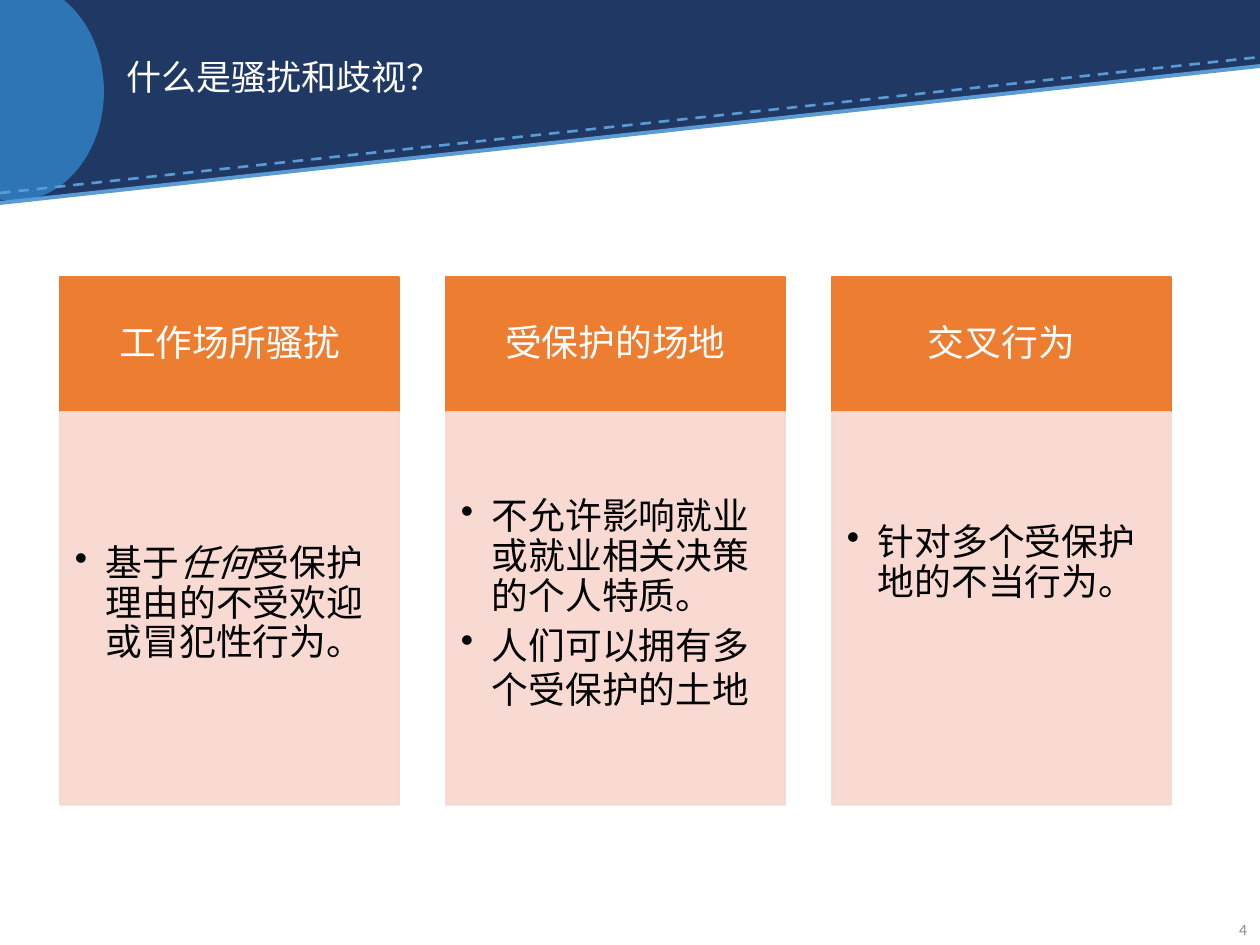
from dataclasses import dataclass

from lxml import etree
from pptx import Presentation
from pptx.dml.color import RGBColor
from pptx.enum.dml import MSO_LINE
from pptx.enum.shapes import MSO_CONNECTOR, MSO_SHAPE
from pptx.enum.text import MSO_ANCHOR, PP_ALIGN
from pptx.oxml.ns import qn
from pptx.util import Pt

EMU_PER_PX = 914400 / 126
RECT, TRIANGLE, OVAL = MSO_SHAPE.RECTANGLE, MSO_SHAPE.RIGHT_TRIANGLE, MSO_SHAPE.OVAL
LEFT, CENTER, RIGHT = PP_ALIGN.LEFT, PP_ALIGN.CENTER, PP_ALIGN.RIGHT
MIDDLE, DASH = MSO_ANCHOR.MIDDLE, MSO_LINE.DASH
CJK, LATIN = "Noto Sans CJK SC", "Calibri"
COLORS = {
    "navy": "203864", "blue": "2E75B6", "sky": "5B9BD5", "orange": "ED7D31",
    "peach": "F8D7CE", "white": "FFFFFF", "black": "000000", "grey": "8C8C8C",
}

Box = tuple[int, int, int, int]


@dataclass
class Run:
    text: str
    italic: bool = False


@dataclass
class Para:
    runs: list[Run]
    spacing: float = 0.9


@dataclass
class Card:
    heading: str
    bullets: list[Para]
    bottom: int = 23


@dataclass
class Style:
    size: int
    color: str
    font: str = CJK
    align: PP_ALIGN = LEFT
    bullet: bool = False


def px(n: int) -> int:
    return round(n * EMU_PER_PX)


def rgb(name: str) -> RGBColor:
    return RGBColor.from_string(COLORS[name])


def set_alpha(fill, percent: int) -> None:
    color = fill.find(".//" + qn("a:srgbClr"))
    etree.SubElement(color, qn("a:alpha"), val=str(percent * 1000))


def add_block(s, kind, box: Box, color: str, outline: bool = False, alpha: int = 100):
    sp = s.shapes.add_shape(kind, *map(px, box))
    sp.shadow.inherit = False
    sp.fill.solid()
    sp.fill.fore_color.rgb = rgb(color)
    if outline:
        sp.line.color.rgb = rgb(color)
        sp.line.width = Pt(1)
    else:
        sp.line.fill.background()
    if alpha < 100:
        pr = sp._element.spPr
        set_alpha(pr.find(qn("a:solidFill")), alpha)
        set_alpha(pr.find(qn("a:ln")), alpha)
    return sp


def add_line(s, start: tuple[int, int], end: tuple[int, int], width: float, dash=None) -> None:
    c = s.shapes.add_connector(MSO_CONNECTOR.STRAIGHT, *map(px, start + end))
    c.line.color.rgb = rgb("sky")
    c.line.width = Pt(width)
    if dash is not None:
        c.line.dash_style = dash
    etree.SubElement(c._element.spPr, qn("a:effectLst"))


def write(sp, paras: list[Para], style: Style, insets: Box = (13, 6, 13, 6)) -> None:
    tf = sp.text_frame
    sides = ("left", "top", "right", "bottom")
    frame = {f"margin_{side}": px(n) for side, n in zip(sides, insets)}
    for key, value in (frame | {"word_wrap": True, "vertical_anchor": MIDDLE}).items():
        setattr(tf, key, value)
    for i, para in enumerate(paras):
        p = tf.paragraphs[0] if i == 0 else tf.add_paragraph()
        p.alignment = style.align
        p.line_spacing = para.spacing
        if i:
            p.space_before = Pt(3)
        if style.bullet:
            ppr = p._p.get_or_add_pPr()
            ppr.set("marL", str(px(31)))
            ppr.set("indent", str(-px(31)))
            etree.SubElement(ppr, qn("a:buChar"), char="•")
        for run in para.runs:
            r = p.add_run()
            r.text = run.text
            r.font.color.rgb = rgb(style.color)
            formats = {"size": Pt(style.size), "name": style.font, "italic": run.italic}
            for key, value in formats.items():
                setattr(r.font, key, value)
            etree.SubElement(r._r.get_or_add_rPr(), qn("a:ea"), typeface=style.font)


def add_text(s, box: Box, para: Para, style: Style) -> None:
    write(s.shapes.add_textbox(*map(px, box)), [para], style)


def add_card(s, left: int, card: Card) -> None:
    head = add_block(s, RECT, (left, 277, 339, 135), "orange", outline=True)
    write(head, [Para([Run(card.heading)])], Style(21, "white", align=CENTER), (20, 11, 20, 11))
    body = add_block(s, RECT, (left, 412, 339, 393), "peach", outline=True, alpha=90)
    write(body, card.bullets, Style(21, "black", bullet=True), (15, 15, 20, card.bottom))


CARDS = [
    Card("工作场所骚扰", [
        Para([Run("基于"), Run("任何", True), Run("受保护理由的不受欢迎或冒犯性行为。")]),
    ]),
    Card("受保护的场地", [
        Para([Run("不允许影响就业或就业相关决策的个人特质。")]),
        Para([Run("人们可以拥有多个受保护的土地")], 1.0),
    ]),
    Card("交叉行为", [Para([Run("针对多个受保护地的不当行为。")])], bottom=105),
]


def main() -> None:
    prs = Presentation()
    prs.slide_width, prs.slide_height = px(1260), px(945)
    s = prs.slides.add_slide(prs.slide_layouts[6])

    # Slanted banner
    add_block(s, RECT, (0, 0, 1260, 66), "navy")
    slope = add_block(s, TRIANGLE, (0, 65, 1260, 137), "navy")
    slope._element.spPr.find(qn("a:xfrm")).set("flipV", "1")
    add_block(s, OVAL, (-74, -18, 178, 219), "blue")
    add_line(s, (0, 193), (1260, 57), 1.5, DASH)
    add_line(s, (0, 203), (1260, 66), 2.25)

    # Title and slide number
    add_text(s, (113, 25, 1014, 108), Para([Run("什么是骚扰和歧视？")]), Style(20, "white"))
    add_text(s, (1193, 904, 67, 50), Para([Run("4")], 1.0), Style(9, "grey", LATIN, RIGHT))

    # Three cards at an equal pitch
    for i, card in enumerate(CARDS):
        add_card(s, 60 + i * 386, card)

    prs.save("out.pptx")


if __name__ == "__main__":
    main()
